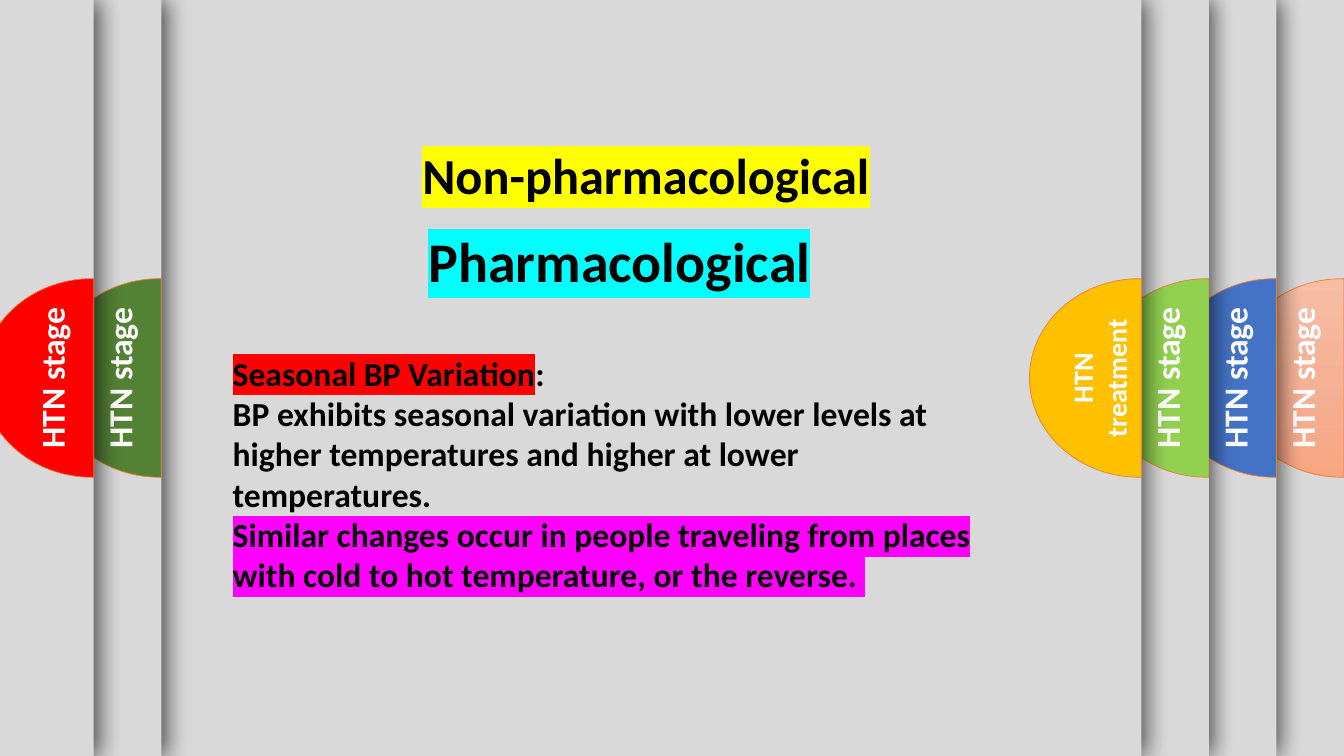
from copy import deepcopy

from lxml.etree import SubElement
from pptx import Presentation
from pptx.dml.color import RGBColor
from pptx.enum.shapes import MSO_SHAPE
from pptx.enum.text import MSO_AUTO_SIZE, PP_ALIGN
from pptx.oxml.ns import qn
from pptx.util import Inches, Pt

SLIDE_WIDTH, SLIDE_HEIGHT = 13.33, 7.5
COLORS = {
    "gray": "D9D9D9", "black": "000000", "white": "FFFFFF", "outline": "ED7D31",
    "blue": "4472C4", "lime": "92D050", "gold": "FFC000", "green": "548235",
    "red": "FF0000", "yellow": "FFFF00", "cyan": "00FFFF", "magenta": "FF00FF",
    "peach light": "F7BDA5", "peach": "F5B196", "peach dark": "F8A582",
}


def rgb(color):
    return RGBColor.from_string(COLORS[color])


class SlideBuilder:
    font_name = "Calibri"

    def __init__(self, slide):
        self.slide = slide
        slide.background.fill.solid()
        slide.background.fill.fore_color.rgb = rgb("gray")

    def panel(self, right):
        """Full-slide sheet with a soft shadow on its right edge."""
        shape = self.slide.shapes.add_shape(
            MSO_SHAPE.RECTANGLE, Inches(right - SLIDE_WIDTH), 0,
            Inches(SLIDE_WIDTH), Inches(SLIDE_HEIGHT))
        shape.fill.solid()
        shape.fill.fore_color.rgb = rgb("gray")
        shape.line.fill.background()
        shape.shadow.inherit = False
        effects = shape._element.spPr.find(qn("a:effectLst"))
        shadow = SubElement(effects, qn("a:outerShdw"), blurRad=str(Pt(17)),
                            dist=str(Pt(3)), dir="0", algn="l", rotWithShape="0")
        color = SubElement(shadow, qn("a:srgbClr"), val=COLORS["black"])
        SubElement(color, qn("a:alpha"), val="65000")

    def half_disc(self, right, colors):
        """Tab bulging to the left, in one color or a vertical gradient."""
        width, height, strip = 1.11, 1.97, 0.02
        left, top = right - width, (SLIDE_HEIGHT - height) / 2
        corners = [(width, 0), (width, height), (width - strip, height),
                   (0, height / 2), (width - strip, 0)]
        builder = self.slide.shapes.build_freeform(
            Inches(right - strip), Inches(top))
        builder.add_line_segments(
            [(Inches(left + x), Inches(top + y)) for x, y in corners], close=True)
        shape = builder.convert_to_shape()

        # Round the two left sides into quarter ellipses
        pull_x, pull_y = 0.55 * (width - strip), 0.55 * height / 2
        start_x = width - strip
        curves = [
            [(start_x - pull_x, height), (0, height / 2 + pull_y), (0, height / 2)],
            [(0, height / 2 - pull_y), (start_x - pull_x, 0), (start_x, 0)],
        ]
        sides = shape._element.spPr.findall(".//" + qn("a:lnTo"))[3:5]
        for side, curve in zip(sides, curves):
            outline = side.getparent()
            bezier = SubElement(outline, qn("a:cubicBezTo"))
            for x, y in curve:
                SubElement(bezier, qn("a:pt"), x=str(Inches(x)), y=str(Inches(y)))
            outline.replace(side, bezier)

        if len(colors) == 1:
            shape.fill.solid()
            shape.fill.fore_color.rgb = rgb(colors[0])
        else:
            shape.fill.gradient()
            shape.fill.gradient_angle = 270
            stop_list = shape._element.spPr.find(".//" + qn("a:gsLst"))
            stop_list.append(deepcopy(stop_list[0]))
            for index, (stop, color) in enumerate(zip(shape.fill.gradient_stops, colors)):
                stop.color.rgb = rgb(color)
                stop.position = index / (len(colors) - 1)
        shape.line.color.rgb = rgb("outline")
        shape.line.width = Pt(0.5)
        shape.shadow.inherit = False

    def text(self, left, top, width, height, paragraphs, size, color="black",
             alignment=PP_ALIGN.LEFT, rotation=0):
        """Text box; each paragraph is a list of (wording, highlight) runs."""
        shape = self.slide.shapes.add_textbox(
            Inches(left), Inches(top), Inches(width), Inches(height))
        shape.rotation = rotation
        frame = shape.text_frame
        frame.word_wrap = True
        frame.auto_size = MSO_AUTO_SIZE.SHAPE_TO_FIT_TEXT
        for index, runs in enumerate(paragraphs):
            paragraph = frame.add_paragraph() if index else frame.paragraphs[0]
            paragraph.alignment = alignment
            for wording, highlight in runs:
                run = paragraph.add_run()
                run.text = wording
                run.font.size = Pt(size)
                run.font.bold = True
                run.font.color.rgb = rgb(color)
                if highlight:
                    mark = SubElement(run.font._element, qn("a:highlight"))
                    SubElement(mark, qn("a:srgbClr"), val=COLORS[highlight])
                run.font.name = self.font_name

    def tab(self, right, colors, label, size, height):
        self.panel(right)
        self.half_disc(right, colors)
        self.text(right - 1.26, (SLIDE_HEIGHT - height) / 2, 1.68, height,
                  [[(label, None)]], size, "white", PP_ALIGN.CENTER, 270)


def main():
    presentation = Presentation()
    presentation.slide_width = Inches(SLIDE_WIDTH)
    presentation.slide_height = Inches(SLIDE_HEIGHT)
    builder = SlideBuilder(presentation.slides.add_slide(presentation.slide_layouts[6]))

    # Stacked tabs: four on the right, two on the left
    step = 0.67
    stage = ("HTN stage", 24, 0.5)
    treatment = ("HTN treatment", 20, 0.77)
    stacks = [
        (SLIDE_WIDTH, [(["peach light", "peach", "peach dark"], stage), (["blue"], stage),
                       (["lime"], stage), (["gold"], treatment)]),
        (1.6, [(["green"], stage), (["red"], stage)]),
    ]
    for first_right, tabs in stacks:
        for index, (colors, label) in enumerate(tabs):
            builder.tab(first_right - index * step, colors, *label)

    # Headings
    builder.text(4.09, 1.38, 4.65, 0.71, [[("Non-pharmacological", "yellow")]], 36)
    builder.text(4.15, 2.2, 4.52, 0.77, [[("Pharmacological", "cyan")]], 40)

    # Seasonal variation
    builder.text(2.21, 3.45, 7.76, 2.52, [
        [("Seasonal BP Variation", "red"), (":", None)],
        [("BP exhibits seasonal variation with lower levels at higher temperatures "
          "and higher at lower temperatures.", None)],
        [("Similar changes occur in people traveling from places with cold to hot "
          "temperature, or the reverse. ", "magenta")],
    ], 24)

    presentation.save("out.pptx")


if __name__ == "__main__":
    main()
